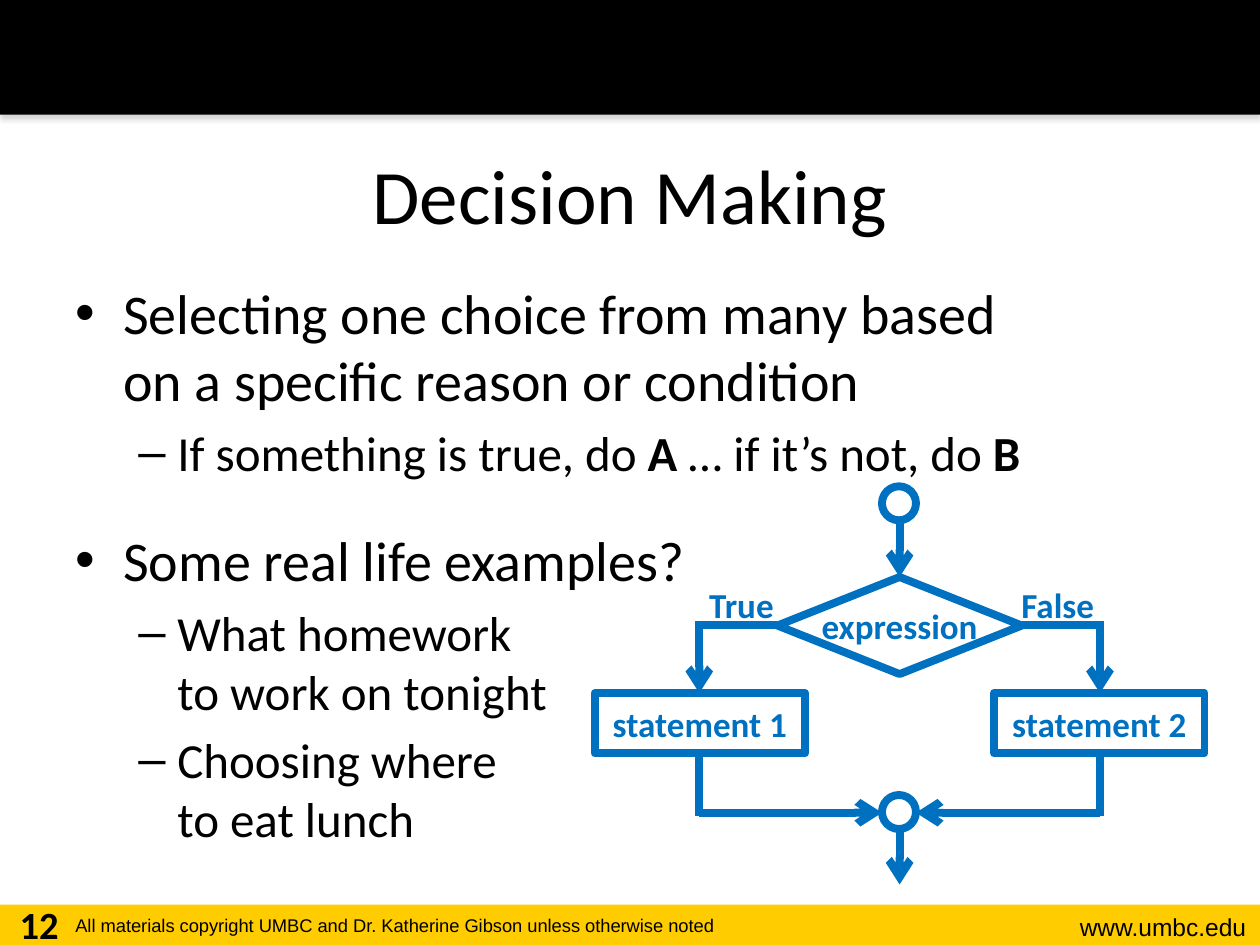
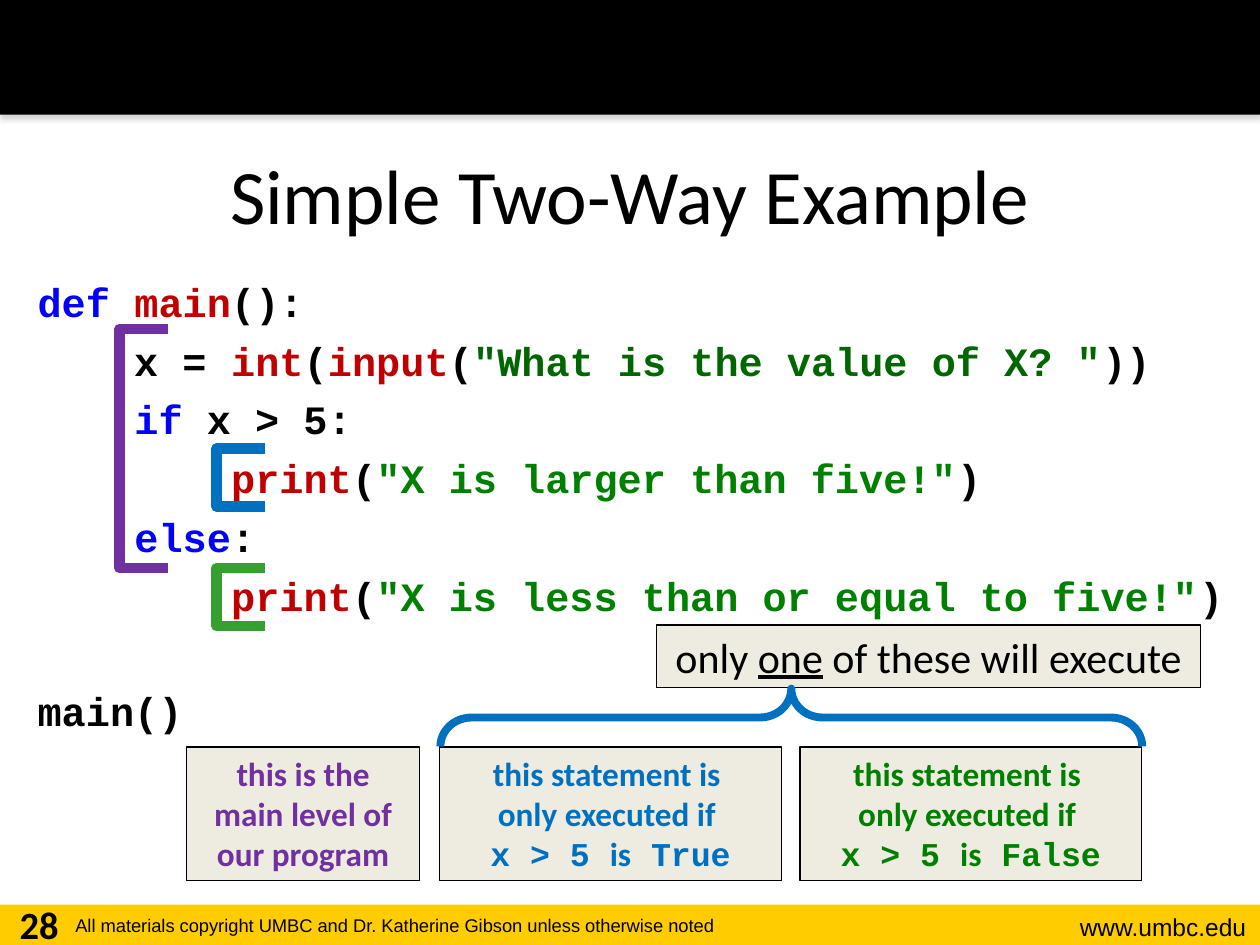
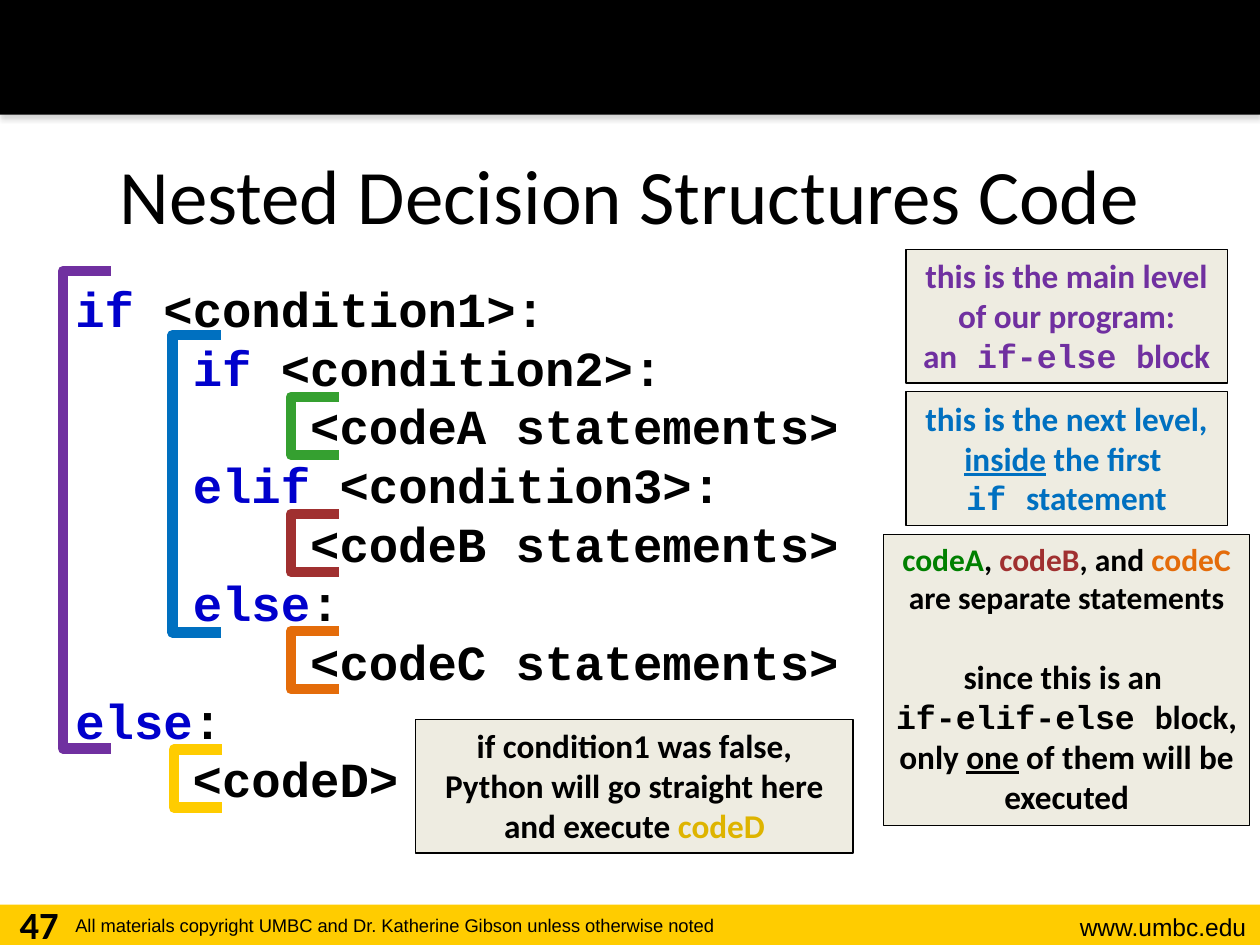
from dataclasses import dataclass
from typing import NamedTuple, Optional

from lxml.etree import SubElement
from pptx import Presentation
from pptx.dml.color import RGBColor
from pptx.enum.shapes import MSO_CONNECTOR, MSO_SHAPE as SHAPE
from pptx.enum.text import MSO_ANCHOR as ANCHOR, PP_ALIGN as ALIGN
from pptx.oxml.ns import qn
from pptx.util import Inches, Pt

COLORS = {
    "black": "000000", "white": "FFFFFF", "gold": "FFCC00", "shadow": "808080",
    "blue": "0070C0", "purple": "7030A0", "bracket green": "35A030",
    "green": "008000", "dark green": "006600", "maroon": "A03030",
    "orange": "E46C0A", "dark gold": "DEB400", "note": "EEECE1",
    "bright blue": "0000FF", "keyword": "0000CC", "call": "C00000",
}
BODY, CODE, FOOTER = "Calibri", "Courier New", "Arial"
COPYRIGHT = "All materials copyright UMBC and Dr. Katherine Gibson unless otherwise noted"
BRACKET_WIDTH, SMALL_BRACKET = 0.38, 0.46
FLOW_WEIGHT = 4.5


class Box(NamedTuple):
    x: float
    y: float
    w: float
    h: float


@dataclass
class Run:
    text: str
    color: str = ""
    font: str = ""
    bold: Optional[bool] = None
    underline: bool = False


@dataclass
class Para:
    runs: list
    size: float = 0
    before: float = 0
    bullet: str = ""
    margin: float = 0
    hang: float = 0


@dataclass
class Bracket:
    x: float
    y: float
    color: str
    h: float = SMALL_BRACKET


@dataclass
class Note:
    box: Box
    paras: list
    color: str = "black"
    size: float = 19
    bold: bool = True


@dataclass
class Line:
    start: tuple
    end: tuple
    arrow: bool = False


def rgb(name: str) -> RGBColor:
    return RGBColor.from_string(COLORS[name])


def place(box: Box) -> list:
    return [Inches(v) for v in box]


def add_bullet(p, para: Para) -> None:
    p_pr = p._p.get_or_add_pPr()
    p_pr.set("marL", str(Inches(para.margin)))
    p_pr.set("indent", str(-Inches(para.hang)))
    SubElement(p_pr, qn("a:buFont"), typeface="Arial")
    SubElement(p_pr, qn("a:buChar"), char=para.bullet)


def write_text(s, paras, *, size=18, color="black", font=BODY, bold=False,
               align=ALIGN.LEFT, anchor=ANCHOR.TOP, wrap=True) -> None:
    """Fill a shape with text; a plain string is one paragraph or one run."""
    tf = s.text_frame
    tf.word_wrap, tf.vertical_anchor = wrap, anchor
    if isinstance(paras, str):
        paras = [Para([paras])]
    for i, para in enumerate(paras):
        p = tf.add_paragraph() if i else tf.paragraphs[0]
        p.alignment = align
        if para.before:
            p.space_before = Pt(para.before)
        if para.bullet:
            add_bullet(p, para)
        for item in para.runs:
            run = Run(item) if isinstance(item, str) else item
            for n, piece in enumerate(run.text.split("\n")):
                if n:
                    p.add_line_break()
                if not piece:
                    continue
                r = p.add_run()
                r.text = piece
                r.font.name = run.font or font
                r.font.size = Pt(para.size or size)
                r.font.bold = bold if run.bold is None else run.bold
                r.font.underline = run.underline
                r.font.color.rgb = rgb(run.color or color)


def add_text(slide, box: Box, paras, **fmt) -> None:
    write_text(slide.shapes.add_textbox(*place(box)), paras, **fmt)


def add_shape(slide, kind, box: Box, fill="", line="", weight=0.75):
    s = slide.shapes.add_shape(kind, *place(box))
    s.shadow.inherit = False
    if fill:
        s.fill.solid()
        s.fill.fore_color.rgb = rgb(fill)
    else:
        s.fill.background()
    if line:
        s.line.color.rgb = rgb(line)
        s.line.width = Pt(weight)
    else:
        s.line.fill.background()
    return s


def add_line(slide, line: Line) -> None:
    ends = [Inches(v) for v in (*line.start, *line.end)]
    s = slide.shapes.add_connector(MSO_CONNECTOR.STRAIGHT, *ends)
    s.line.color.rgb = rgb("blue")
    s.line.width = Pt(FLOW_WEIGHT)
    if line.arrow:
        SubElement(s.line._get_or_add_ln(), qn("a:tailEnd"), type="arrow")
    SubElement(s._element.spPr, qn("a:effectLst"))


def add_drop_shadow(s) -> None:
    effects = s._element.spPr.find(qn("a:effectLst"))
    shadow = SubElement(effects, qn("a:outerShdw"), blurRad=str(Pt(3.1)),
                        dist=str(Pt(1.8)), dir="5400000", rotWithShape="0")
    tint = SubElement(shadow, qn("a:srgbClr"), val=COLORS["shadow"])
    SubElement(tint, qn("a:alpha"), val="35000")


def add_bracket(slide, bracket: Bracket) -> None:
    box = Box(bracket.x, bracket.y, BRACKET_WIDTH, bracket.h)
    s = add_shape(slide, SHAPE.LEFT_BRACKET, box, line=bracket.color, weight=6)
    s.adjustments[0] = 0


def add_note(slide, note: Note) -> None:
    s = add_shape(slide, SHAPE.RECTANGLE, note.box, "note", "black")
    write_text(s, note.paras, size=note.size, color=note.color, bold=note.bold,
               align=ALIGN.CENTER)


def new_slide(prs, title: str, number: int):
    """Add a slide with the bands, footer, title and page number."""
    slide = prs.slides.add_slide(prs.slide_layouts[6])
    slide.background.fill.solid()
    slide.background.fill.fore_color.rgb = rgb("white")
    add_shape(slide, SHAPE.RECTANGLE, Box(0, 7.18, 10, 0.32), "gold")
    add_drop_shadow(add_shape(slide, SHAPE.RECTANGLE, Box(0, 0, 10, 0.91), "black"))
    add_text(slide, Box(8, 7.19, 1.99, 0.34), "www.umbc.edu", size=14,
             font=FOOTER, align=ALIGN.RIGHT)
    add_text(slide, Box(0.5, 7.21, 6.56, 0.29), COPYRIGHT, size=10.5, font=FOOTER)
    add_text(slide, Box(0.5, 0.91, 9, 1.25), title, size=44,
             align=ALIGN.CENTER, anchor=ANCHOR.MIDDLE)
    add_text(slide, Box(0, 7.1, 0.62, 0.4), str(number), size=22, bold=True,
             align=ALIGN.CENTER)
    return slide


def point(*runs, before=6.4) -> Para:
    return Para(list(runs), 32, before, "•", 0.38, 0.38)


def subpoint(*runs) -> Para:
    return Para(list(runs), 28, 5.6, "–", 0.81, 0.31)


def add_flowchart(slide) -> None:
    mid, left, right = 7.14, 5.55, 8.73
    branch_y, box_y, join_y = 4.96, 5.5, 6.45
    box_w, box_h, ring = 1.67, 0.48, 0.27
    label = dict(size=20, color="blue", bold=True, align=ALIGN.CENTER,
                 anchor=ANCHOR.MIDDLE)

    for y in (3.86, 6.31):
        add_shape(slide, SHAPE.OVAL, Box(7, y, ring, ring), line="blue",
                  weight=FLOW_WEIGHT)
    nodes = [
        (SHAPE.DIAMOND, Box(6.17, 4.58, 1.94, 0.77), "expression"),
        (SHAPE.RECTANGLE, Box(4.72, box_y, box_w, box_h), "statement 1"),
        (SHAPE.RECTANGLE, Box(7.89, box_y, box_w, box_h), "statement 2"),
    ]
    for kind, box, text in nodes:
        s = add_shape(slide, kind, box, line="blue", weight=FLOW_WEIGHT)
        write_text(s, text, wrap=kind != SHAPE.DIAMOND, **label)
    for x, text in ((5.05, "True"), (7.56, "False")):
        add_text(slide, Box(x, 4.56, box_w, box_h), text, **label)

    lines = [
        Line((mid, 4.13), (mid, 4.58), True),
        Line((mid, 6.58), (mid, 7.02), True),
        Line((6.17, branch_y), (left, branch_y)),
        Line((8.11, branch_y), (8.75, branch_y)),
        Line((left, join_y), (7, join_y), True),
        Line((right, join_y), (7.27, join_y), True),
    ]
    for x in (left, right):
        lines += [Line((x, 4.93), (x, box_y), True),
                  Line((x, box_y + box_h), (x, 6.48))]
    for line in lines:
        add_line(slide, line)


def decision_slide(prs) -> None:
    slide = new_slide(prs, "Decision Making", 12)
    add_text(slide, Box(0.5, 2.16, 9, 4.94), [
        point("Selecting one choice from many based \non a specific reason or condition",
              before=0),
        subpoint("If something is true, do ", Run("A", bold=True),
                 " … if it’s not, do ", Run("B", bold=True)),
        point("Some real life examples?", before=25),
        subpoint("What homework\nto work on tonight"),
        subpoint("Choosing where \nto eat lunch"),
    ])
    add_flowchart(slide)


def two_way_slide(prs) -> None:
    slide = new_slide(prs, "Simple Two-Way Example", 28)
    keyword, call = "bright blue", "call"
    code = [
        [Run("def ", keyword), Run("main", call), "():"],
        ["    x = ", Run("int", call), "(", Run("input", call), "(",
         Run('"What is the value of X? "', "dark green"), "))"],
        ["    ", Run("if", keyword), " x > 5:"],
        ["        ", Run("print", call), "(",
         Run('"X is larger than five!"', "green"), ")"],
        ["    ", Run("else", keyword), ":"],
        ["        ", Run("print", call), "(",
         Run('"X is less than or equal to five!"', "green"), ")"],
    ]
    paras = [Para(runs, before=6 if i else 0) for i, runs in enumerate(code)]
    paras.append(Para(["main()"], before=38))
    add_text(slide, Box(0.2, 2.15, 9.69, 4.55), paras, size=23, font=CODE, bold=True)

    for bracket in (Bracket(0.95, 2.61, "purple", 1.9),
                    Bracket(1.72, 3.56, "blue"),
                    Bracket(1.72, 4.51, "bracket green")):
        add_bracket(slide, bracket)

    add_note(slide, Note(Box(1.48, 5.93, 1.85, 1.06),
                         [Para(["this is the main level of our program"])], "purple"))
    for x, color, outcome in ((3.49, "blue", "True"), (6.35, "green", "False")):
        add_note(slide, Note(Box(x, 5.93, 2.71, 1.06), [Para([
            "this statement is \nonly executed if \n", Run("x > 5 ", font=CODE),
            "is", Run(f" {outcome}", font=CODE)])], color))
    add_note(slide, Note(Box(5.21, 4.96, 4.32, 0.5), [Para([
        "only ", Run("one", underline=True), " of these will execute"])],
        size=24, bold=False))

    brace = add_shape(slide, SHAPE.LEFT_BRACE, Box(6.05, 2.91, 0.46, 5.57),
                      line="blue", weight=FLOW_WEIGHT)
    brace.rotation = 90
    brace.adjustments[0] = 0.54


def nested_slide(prs) -> None:
    slide = new_slide(prs, "Nested Decision Structures Code", 47)
    code = [
        ("", "if", " <condition1>:"),
        ("    ", "if", " <condition2>:"),
        ("        ", "", "<codeA statements>"),
        ("    ", "elif", " <condition3>:"),
        ("        ", "", "<codeB statements>"),
        ("    ", "else", ":"),
        ("        ", "", "<codeC statements>"),
        ("", "else", ":"),
        ("    ", "", "<codeD>"),
    ]
    add_text(slide, Box(0.5, 2.16, 9, 4.94),
             [Para([indent, Run(word, "keyword"), rest]) for indent, word, rest in code],
             size=28, font=CODE, bold=True)

    brackets = [Bracket(0.5, 2.15, "purple", 3.79), Bracket(1.37, 2.66, "blue", 2.36),
                Bracket(1.38, 5.95, "gold")]
    brackets += [Bracket(2.31, 3.15 + 0.93 * i, color)
                 for i, color in enumerate(("bracket green", "maroon", "orange"))]
    for bracket in brackets:
        add_bracket(slide, bracket)

    notes = [
        Note(Box(7.19, 1.98, 2.55, 1.06), [Para([
            "this is the main level of our program:\nan",
            Run(" if-else ", font=CODE), "block"])], "purple"),
        Note(Box(7.19, 3.11, 2.55, 1.06), [Para([
            "this is the next level, ", Run("inside", underline=True),
            " the first \n", Run("if ", font=CODE), "statement"])], "blue"),
        Note(Box(7.01, 4.24, 2.91, 2.31), [
            Para([Run("codeA", "green"), ", ", Run("codeB", "maroon"), ", and ",
                  Run("codeC", "orange"), " are separate statements"], size=18),
            Para(["since this is an \n", Run("if-elif-else ", font=CODE),
                  "block, only ", Run("one", underline=True),
                  " of them will be executed"], before=23)]),
        Note(Box(3.3, 5.71, 3.47, 1.06), [Para([
            "if condition1 was false, Python will go straight here and execute ",
            Run("codeD", "dark gold")])]),
    ]
    for note in notes:
        add_note(slide, note)


def main() -> None:
    prs = Presentation()
    prs.slide_width, prs.slide_height = Inches(10), Inches(7.5)
    decision_slide(prs)
    two_way_slide(prs)
    nested_slide(prs)
    prs.save("out.pptx")


if __name__ == "__main__":
    main()
